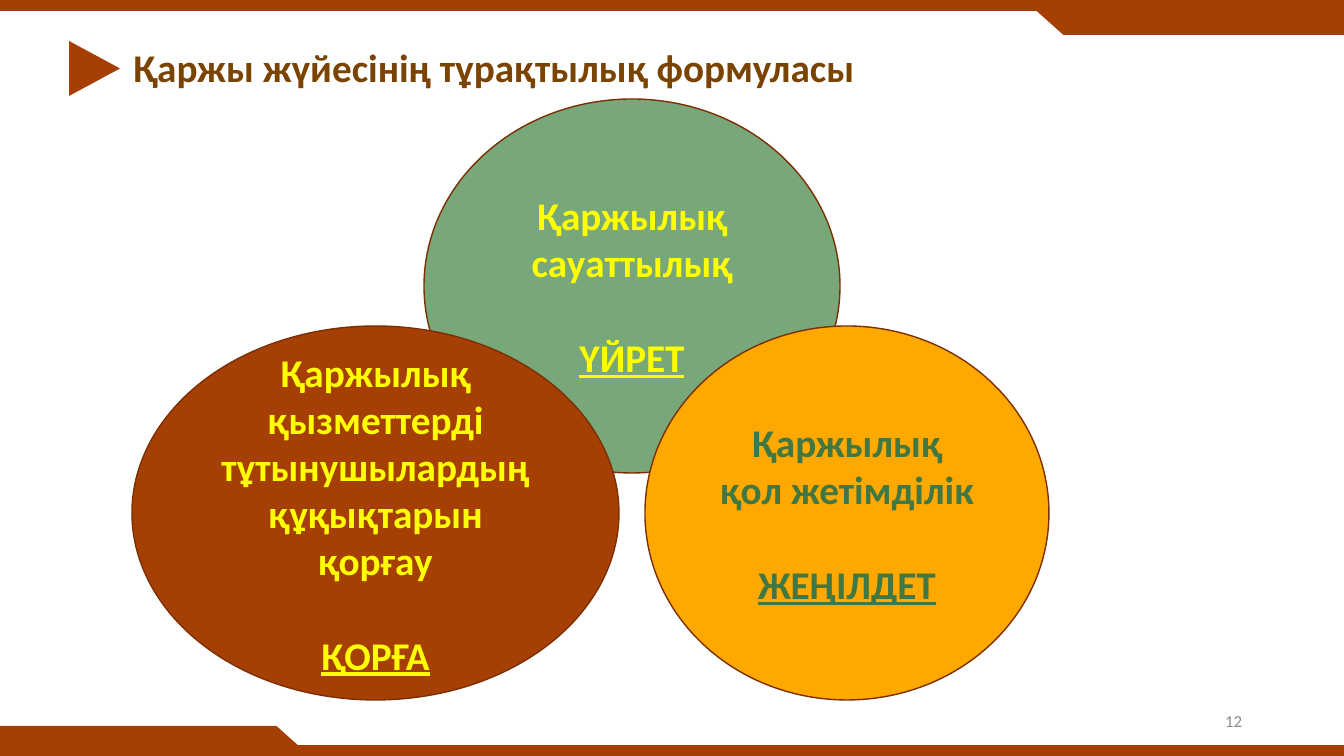
"""Build the slide on the formula of financial stability."""
from pptx import Presentation
from pptx.dml.color import RGBColor
from pptx.enum.shapes import MSO_SHAPE
from pptx.enum.text import MSO_ANCHOR, PP_ALIGN
from pptx.util import Pt

RECT, OVAL = MSO_SHAPE.RECTANGLE, MSO_SHAPE.OVAL
MERGE, TRIANGLE = MSO_SHAPE.FLOWCHART_MERGE, MSO_SHAPE.ISOSCELES_TRIANGLE
TOP, MIDDLE = MSO_ANCHOR.TOP, MSO_ANCHOR.MIDDLE
CENTER, RIGHT, JUSTIFY = PP_ALIGN.CENTER, PP_ALIGN.RIGHT, PP_ALIGN.JUSTIFY

PX = 914400 / 100.8
WIDE, HIGH = 1344, 756
FONT = "Calibri"
COLORS = {
    "rust": "A63F03", "edge": "7B2F02", "title": "7A4300", "gray": "8C8C8C",
    "sage": "78A779", "amber": "FFA900", "yellow": "FFFF00", "green": "407742",
}

TITLE = "Қаржы жүйесінің тұрақтылық формуласы"
NUMBER = "12"
FRAME = [
    (RECT, (0, 0, WIDE, 11), 0),
    (RECT, (0, 745, WIDE, 11), 0),
    (RECT, (1064, 5, 280, 30), 0),
    (MERGE, (1030, 5, 67, 30), 0),
    (RECT, (0, 726, 276, 30), 0),
    (MERGE, (243, 726, 67, 30), 180),
    (TRIANGLE, (67, 43, 55, 51), 90),
]
CIRCLES = [
    ("Қаржылық сауаттылық", "ҮЙРЕТ", (424, 99, 416, 374), "sage", "yellow"),
    ("Қаржылық қызметтерді тұтынушылардың құқықтарын қорғау", "ҚОРҒА",
     (132, 326, 487, 374), "rust", "yellow"),
    ("Қаржылық\vқол жетімділік", "ЖЕҢІЛДЕТ", (645, 326, 404, 374),
     "amber", "green"),
]


def color(name):
    return RGBColor.from_string(COLORS[name])


def scale(box):
    return [round(n * PX) for n in box]


def style(par, size, tint, align, bold=True):
    par.alignment = align
    font = par.font
    font.name, font.size, font.bold = FONT, Pt(size), bold
    font.color.rgb = color(tint)


def draw(slide, kind, box, fill):
    shape = slide.shapes.add_shape(kind, *scale(box))
    shape.shadow.inherit = False
    shape.fill.solid()
    shape.fill.fore_color.rgb = color(fill)
    shape.line.fill.background()
    return shape


def add_title(slide):
    title = slide.shapes.title
    title.left, title.top, title.width, title.height = scale((123, 38, 931, 57))
    frame = title.text_frame
    frame.text = TITLE
    frame.vertical_anchor = TOP
    style(frame.paragraphs[0], 28, "title", JUSTIFY)


def add_number(slide):
    frame = slide.shapes.add_textbox(*scale((950, 701, 302, 40))).text_frame
    frame.word_wrap = True
    frame.vertical_anchor = MIDDLE
    frame.text = NUMBER
    style(frame.paragraphs[0], 12, "gray", RIGHT, False)


def add_circle(slide, label, verb, box, fill, tint):
    oval = draw(slide, OVAL, box, fill)
    oval.line.color.rgb = color("edge")
    oval.line.width = Pt(1)
    frame = oval.text_frame
    frame.word_wrap = True
    frame.vertical_anchor = MIDDLE
    frame.text = f"{label}\n{verb}"
    for par in frame.paragraphs:
        style(par, 28, tint, CENTER)
    par.space_before = Pt(34)
    par.font.underline = True
    par.runs[0].font.underline = True


def main():
    deck = Presentation()
    deck.slide_width, deck.slide_height = scale((WIDE, HIGH))
    slide = deck.slides.add_slide(deck.slide_layouts[5])
    for kind, box, turn in FRAME:
        draw(slide, kind, box, "rust").rotation = turn
    add_number(slide)
    add_title(slide)
    for circle in CIRCLES:
        add_circle(slide, *circle)
    deck.save("out.pptx")


if __name__ == "__main__":
    main()
